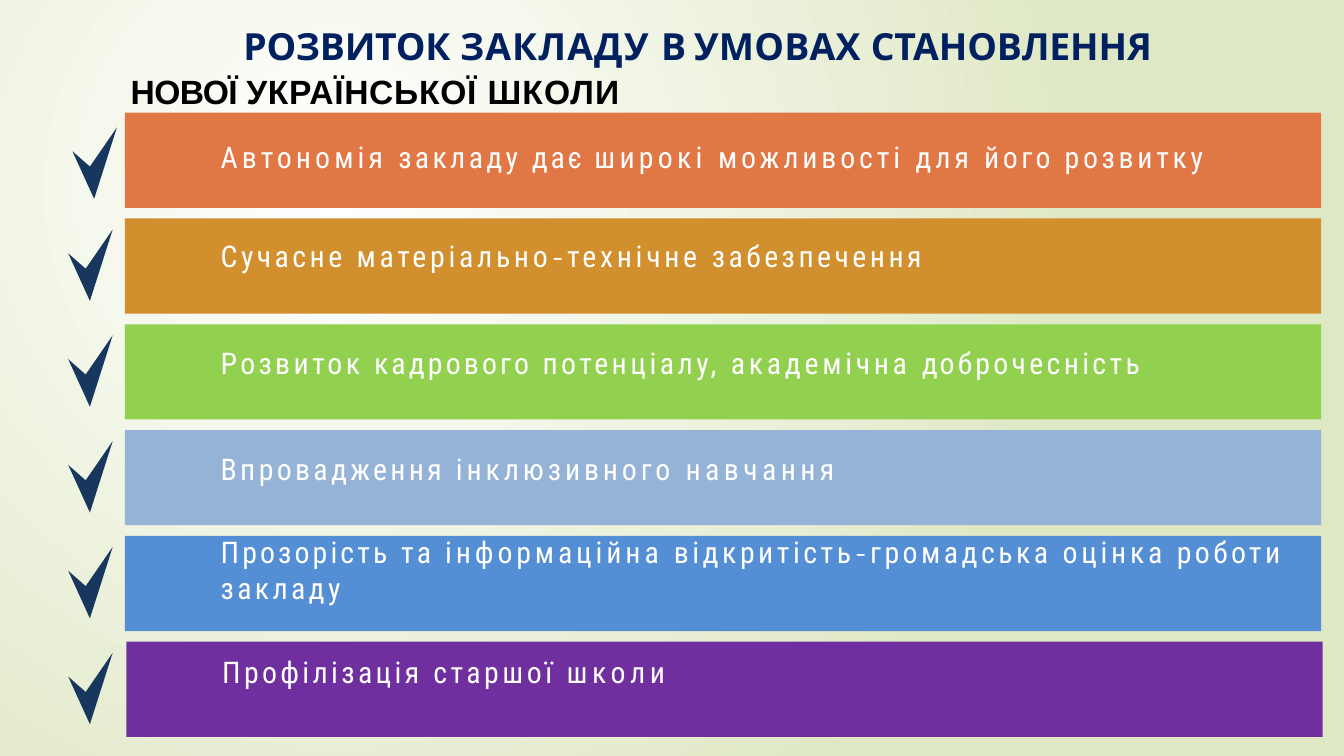
from dataclasses import dataclass

import lxml.etree
import pptx
import pptx.dml.color
import pptx.enum.shapes
import pptx.enum.text
import pptx.oxml.ns
import pptx.util
from pptx.util import Cm

COLORS = {
    "glow": "FFFFFF",
    "meadow": "DFE8C4",
    "heading": "002060",
    "subheading": "000000",
    "item": "FFFFFF",
    "check": "17375E",
}
BAR_COLORS = ["E27746", "D18F2E", "92D050", "94B3D6", "548ED4", "6F2F9F"]
BAR_LEFT, BAR_TOP, BAR_PITCH = 2.36, 2.13, 2.0
BAR_WIDTH, BAR_HEIGHT = 22.61, 1.8
CHECK_OUTLINE = [(-0.51, 0.74), (-0.84, 0.45), (-0.43, 1.35)]


@dataclass
class Style:
    font: str
    size: float
    color: str
    bold: bool = False


@dataclass
class Piece:
    text: str
    tracking: float
    font: str = ""


@dataclass
class Line:
    pieces: list[Piece]
    style: Style
    indent: float = 0
    space_before: float = 0


HEADING = Style("League Spartan", 20, "heading", True)
SUBHEADING = Style("Arial", 18, "subheading", True)
ITEM = Style("Roboto Condensed", 16, "item")
HYPHEN_FONT = "Montserrat"

TITLE = Line([
    Piece("РОЗВИТОК ", -0.1), Piece("ЗАКЛАДУ ", 0.6), Piece("В ", -1.1),
    Piece("УМОВАХ ", 0.1), Piece("СТАНОВЛЕННЯ", -0.1),
], HEADING)

PRIORITIES = [
    Line([Piece("НОВОЇ ", -0.3), Piece("УКРАЇНСЬКОЇ ", 0.4), Piece("ШКОЛИ", 0.6)], SUBHEADING),
    Line([
        Piece("Автономія ", 2.2), Piece("закладу ", 1.8), Piece("дає ", 1.5),
        Piece("широкі ", 2.3), Piece("можливості ", 2.1), Piece("для ", 2.2),
        Piece("його ", 1.9), Piece("розвитку", 2),
    ], ITEM, 1.7, 14.6),
    Line([
        Piece("Сучасне ", 1.9), Piece("матеріально", 2), Piece("-", 2, HYPHEN_FONT),
        Piece("технічне ", 2), Piece("забезпечення", 1.9),
    ], ITEM, 1.7, 34.1),
    Line([
        Piece("Розвиток ", 1.8), Piece("кадрового ", 1.7), Piece("потенціалу, ", 1.9),
        Piece("академічна ", 2), Piece("д", 1), Piece("оброчесність", 1.8),
    ], ITEM, 1.7, 37.9),
    Line([Piece("Впровадження ", 1.8), Piece("інклюзивного ", 2.1), Piece("навчання", 2.4)],
         ITEM, 1.7, 37.5),
    Line([
        Piece("Прозорість ", 1.7), Piece("та ", 1.9), Piece("інформаційна ", 2.1),
        Piece("відкритість", 1.9), Piece("-", 1.9, HYPHEN_FONT), Piece("громадська ", 1.9),
        Piece("оцінка ", 2), Piece("роботи закладу", 1.8),
    ], ITEM, 1.7, 25.6),
    Line([Piece("Профілізація ", 1.8), Piece("старшої ", 1.9), Piece("школи", 2.5)],
         ITEM, 1.73, 25.7),
]


def rgb(name: str) -> pptx.dml.color.RGBColor:
    return pptx.dml.color.RGBColor.from_string(COLORS.get(name, name))


def paint(shape, color: str) -> None:
    shape.shadow.inherit = False
    shape.fill.solid()
    shape.fill.fore_color.rgb = rgb(color)
    shape.line.fill.background()


def paint_background(slide) -> None:
    fill = slide.background.fill
    fill.gradient()
    for stop, color, position in zip(fill.gradient_stops, ("glow", "meadow"), (0, 1)):
        stop.color.rgb = rgb(color)
        stop.position = position
    gradient = slide.element.find(".//" + pptx.oxml.ns.qn("a:gradFill"))
    linear = gradient.find(pptx.oxml.ns.qn("a:lin"))
    circle = lxml.etree.Element(pptx.oxml.ns.qn("a:path"), path="circle")
    lxml.etree.SubElement(circle, pptx.oxml.ns.qn("a:fillToRect"),
                          l="50000", t="50000", r="100000", b="100000")
    gradient.replace(linear, circle)


def write_line(paragraph, line: Line) -> None:
    properties = paragraph._p.get_or_add_pPr()
    properties.set("marL", str(Cm(line.indent)))
    properties.set("indent", "0")
    lxml.etree.SubElement(properties, pptx.oxml.ns.qn("a:buNone"))
    paragraph.alignment = pptx.enum.text.PP_ALIGN.LEFT
    paragraph.space_before = pptx.util.Pt(line.space_before)
    for piece in line.pieces:
        run = paragraph.add_run()
        run.text = piece.text
        run.font.name = piece.font or line.style.font
        run.font.size = pptx.util.Pt(line.style.size)
        run.font.bold = line.style.bold
        run.font.color.rgb = rgb(line.style.color)
        run.font._element.set("spc", str(round(piece.tracking * 100)))


def fill_placeholder(holder, left: float, top: float, width: float, height: float,
                     lines: list[Line]) -> None:
    holder.left, holder.top = Cm(left), Cm(top)
    holder.width, holder.height = Cm(width), Cm(height)
    frame = holder.text_frame
    frame.margin_left = frame.margin_top = frame.margin_right = frame.margin_bottom = 0
    frame.vertical_anchor = pptx.enum.text.MSO_ANCHOR.TOP
    frame.auto_size = pptx.enum.text.MSO_AUTO_SIZE.NONE
    frame.word_wrap = True
    for index, line in enumerate(lines):
        write_line(frame.add_paragraph() if index else frame.paragraphs[0], line)


def add_bar(slide, index: int):
    last = index == len(BAR_COLORS) - 1
    bar = slide.shapes.add_shape(
        pptx.enum.shapes.MSO_SHAPE.RECTANGLE,
        Cm(BAR_LEFT + (0.03 if last else 0)), Cm(BAR_TOP + index * BAR_PITCH),
        Cm(BAR_WIDTH), Cm(BAR_HEIGHT))
    paint(bar, BAR_COLORS[index])
    return bar


def add_checks(slide) -> None:
    tips = [(2.13, BAR_TOP + 0.21 + index * BAR_PITCH) for index in range(len(BAR_COLORS))]
    tips[0] = (2.21, BAR_TOP + 0.28)
    builder = slide.shapes.build_freeform(Cm(tips[0][0]), Cm(tips[0][1]))
    for index, (x, y) in enumerate(tips):
        if index:
            builder.move_to(Cm(x), Cm(y))
        builder.add_line_segments([(Cm(x + dx), Cm(y + dy)) for dx, dy in CHECK_OUTLINE])
    paint(builder.convert_to_shape(), "check")


def main() -> None:
    deck = pptx.Presentation()
    deck.slide_width, deck.slide_height = Cm(25.4), Cm(14.29)
    slide = deck.slides.add_slide(deck.slide_layouts[1])
    paint_background(slide)
    priorities = slide.placeholders[1]
    fill_placeholder(slide.shapes.title, 4.6, 0.43, 18.24, 0.89, [TITLE])
    fill_placeholder(priorities, 2.47, 1.34, 22.9, 12.04, PRIORITIES)
    bars = [add_bar(slide, index) for index in range(len(BAR_COLORS))]
    bars[-1].element.addnext(priorities.element)
    add_checks(slide)
    deck.save("out.pptx")


if __name__ == "__main__":
    main()
